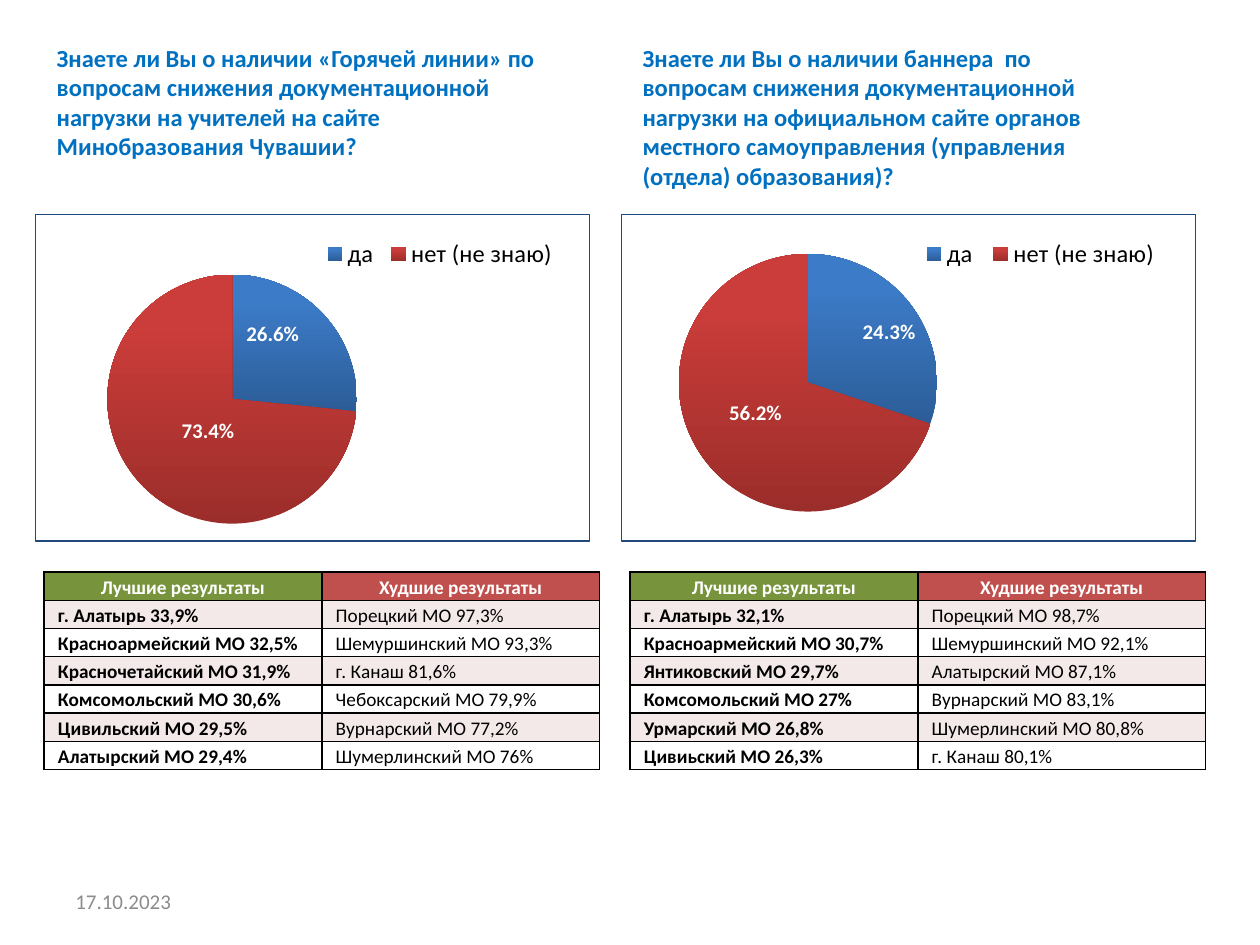
from lxml import etree
from pptx import Presentation
from pptx import util as u
from pptx.chart import data as chart_data
from pptx.dml import color
from pptx.enum import chart as charts, text
from pptx.oxml import ns, parse_xml

COLORS = {
    "heading": "0070C0", "border": "1F497D", "date": "8C8C8C",
    "black": "000000", "white": "FFFFFF", "band": "F4E9E9",
    "best": "77933C", "worst": "C0504D",
}
SLICES = [("2C5D98", "3C7BC7"), ("9B2D2A", "CB3D3A")]
ANSWERS = ["да", "нет (не знаю)"]
HEADER = ("Лучшие результаты", "Худшие результаты")
COLUMNS, ROWS = 100, 75

SURVEYS = [
    {
        "placeholder": 1, "left": 3.5, "width": 44.1,
        "question_size": (41.7, 9.4),
        "question": "Знаете ли Вы о наличии «Горячей линии» по вопросам снижения "
                    "документационной нагрузки на учителей на сайте Минобразования Чувашии?",
        "values": (0.266, 0.734),
        "plot": (0.13, 0.18, 0.45, 0.77),
        "shifts": [(-0.01, -0.07), (0.04, -0.03)],
        "results": [
            ("г. Алатырь 33,9%", "Порецкий МО 97,3%"),
            ("Красноармейский МО 32,5%", "Шемуршинский МО 93,3%"),
            ("Красночетайский МО 31,9%", "г. Канаш 81,6%"),
            ("Комсомольский МО 30,6%", "Чебоксарский МО 79,9%"),
            ("Цивильский МО 29,5%", "Вурнарский МО 77,2%"),
            ("Алатырский МО 29,4%", "Шумерлинский МО 76%"),
        ],
    },
    {
        "placeholder": 3, "left": 50, "width": 45.7,
        "question_size": (39.4, 11.8),
        "question": "Знаете ли Вы о наличии баннера  по вопросам снижения "
                    "документационной нагрузки на официальном сайте органов местного "
                    "самоуправления (управления (отдела) образования)?",
        "values": (0.243, 0.562),
        "plot": (0.1, 0.12, 0.45, 0.79),
        "shifts": [(0.05, -0.04), (0, -0.02)],
        "results": [
            ("г. Алатырь 32,1%", "Порецкий МО 98,7%"),
            ("Красноармейский МО 30,7%", "Шемуршинский МО 92,1%"),
            ("Янтиковский МО 29,7%", "Алатырский МО 87,1%"),
            ("Комсомольский МО 27%", "Вурнарский МО 83,1%"),
            ("Урмарский МО 26,8%", "Шумерлинский МО 80,8%"),
            ("Цивиьский МО 26,3%", "г. Канаш 80,1%"),
        ],
    },
]


class SurveySlide:
    """Holds the style and the current slide, and draws each kind of element."""

    font = "Calibri"

    def __init__(self, deck):
        self.deck = deck
        self.slide = deck.slides.add_slide(deck.slide_layouts[4])

    def area(self, left, top, width, height):
        column, row = self.deck.slide_width / COLUMNS, self.deck.slide_height / ROWS
        return [u.Emu(round(n * step)) for n, step in
                zip((left, top, width, height), (column, row, column, row))]

    def style(self, font, size, shade, bold=False):
        font.name, font.size, font.bold = self.font, u.Pt(size), bold
        font.color.rgb = color.RGBColor.from_string(COLORS[shade])

    def add_text(self, para, words, size, shade, bold=False):
        span = para.add_run()
        span.text = words
        self.style(span.font, size, shade, bold)

    def question(self, index, words, area):
        box = self.slide.placeholders[index]
        box.left, box.top, box.width, box.height = self.area(*area)
        frame = box.text_frame
        frame.vertical_anchor = text.MSO_ANCHOR.TOP
        frame.auto_size = text.MSO_AUTO_SIZE.NONE
        self.add_text(frame.paragraphs[0], words, 14, "heading", True)

    def date(self, words, area):
        frame = self.slide.shapes.add_textbox(*self.area(*area)).text_frame
        frame.word_wrap = True
        frame.vertical_anchor = text.MSO_ANCHOR.MIDDLE
        self.add_text(frame.paragraphs[0], words, 12, "date")

    def layout(self, parent, index, **settings):
        for old in parent.findall(ns.qn("c:layout")):
            parent.remove(old)
        layout = etree.Element(ns.qn("c:layout"))
        manual = etree.SubElement(layout, ns.qn("c:manualLayout"))
        for name, value in settings.items():
            etree.SubElement(manual, ns.qn(f"c:{name}")).set("val", str(value))
        parent.insert(index, layout)

    def pie(self, values, plot, shifts, area):
        source = chart_data.CategoryChartData(number_format="0.0%")
        source.categories = ANSWERS
        source.add_series("Series 1", values)
        chart = self.slide.shapes.add_chart(
            charts.XL_CHART_TYPE.PIE, *self.area(*area), source).chart
        chart.has_title = False
        self.style(chart.font, 18, "black")
        self.frame(chart)
        self.legend(chart)

        pie = chart.plots[0]
        pie.vary_by_categories = True
        pie.has_data_labels = True
        labels = pie.data_labels
        labels.show_value, labels.show_percentage = True, False
        labels.number_format, labels.number_format_is_linked = "0.0%", False
        for index, (stops, shift) in enumerate(zip(SLICES, shifts)):
            self.slice(pie.series[0].points[index], stops, shift)

        x, y, w, h = plot
        self.layout(chart._chartSpace.chart.plotArea, 0, layoutTarget="inner",
                    xMode="edge", yMode="edge", x=x, y=y, w=w, h=h)

    def frame(self, chart):
        chart._chartSpace.chart.addnext(parse_xml(
            f'<c:spPr {ns.nsdecls("c", "a")}><a:solidFill><a:srgbClr val="{COLORS["white"]}"/>'
            f'</a:solidFill><a:ln w="9525"><a:solidFill><a:srgbClr val="{COLORS["border"]}"/>'
            "</a:solidFill></a:ln></c:spPr>"))

    def legend(self, chart):
        chart.has_legend = True
        legend = chart.legend
        legend.position = charts.XL_LEGEND_POSITION.TOP
        legend.include_in_layout = False
        self.style(legend.font, 14, "black")
        self.layout(legend._element, 1, xMode="edge", yMode="edge",
                    x=0.51, y=0.07, w=0.44, h=0.1)

    def slice(self, point, stops, shift):
        fill = point.format.fill
        fill.gradient()
        fill.gradient_angle = 90
        for stop, position, shade in zip(fill.gradient_stops, (0, 0.8), stops):
            stop.position = position
            stop.color.rgb = color.RGBColor.from_string(shade)
        label = point.data_label
        self.style(label.font, 12, "white", True)
        label.position = charts.XL_LABEL_POSITION.CENTER
        self.layout(label._dLbl, 1, x=shift[0], y=shift[1])

    def table(self, rows, area):
        table = self.slide.shapes.add_table(len(rows), len(HEADER), *self.area(*area)).table
        for r, row in enumerate(rows):
            for c, words in enumerate(row):
                shade = ("best", "worst")[c] if r == 0 else ("white", "band")[r % 2]
                self.cell(table.cell(r, c), words, shade, r == 0, c == 0)

    def cell(self, cell, words, shade, heading, bold):
        cell.margin_left = u.Inches(0.07 if heading else 0.11)
        cell.margin_right = u.Inches(0.07)
        cell.margin_top = cell.margin_bottom = 0
        para = cell.text_frame.paragraphs[0]
        para.line_spacing = 1.15
        para.alignment = text.PP_ALIGN.CENTER if heading else text.PP_ALIGN.LEFT
        self.add_text(para, words, 11, "white" if heading else "black", heading or bold)
        cell.fill.solid()
        cell.fill.fore_color.rgb = color.RGBColor.from_string(COLORS[shade])
        for index, side in enumerate(("lnL", "lnR", "lnT", "lnB")):
            cell._tc.get_or_add_tcPr().insert(index, parse_xml(
                f'<a:{side} {ns.nsdecls("a")} w="12700"><a:solidFill>'
                f'<a:srgbClr val="{COLORS["black"]}"/></a:solidFill></a:{side}>'))

    def remove_empty(self):
        for box in list(self.slide.placeholders):
            if not box.text_frame.text:
                box._element.getparent().remove(box._element)


def main():
    deck = Presentation()
    deck.slide_width, deck.slide_height = u.Inches(10), u.Inches(7.5)
    page = SurveySlide(deck)
    for survey in SURVEYS:
        left, width = survey["left"], survey["width"]
        page.question(survey["placeholder"], survey["question"],
                      (left, 2.9, *survey["question_size"]))
        page.pie(survey["values"], survey["plot"], survey["shifts"],
                 (left - 0.75, 17, width, 26))
        page.table([HEADER, *survey["results"]], (left, 45.4, width, 15.7))
    page.date("17.10.2023", (5, 69.5, 23.3, 4))
    page.remove_empty()
    deck.save("out.pptx")


if __name__ == "__main__":
    main()
